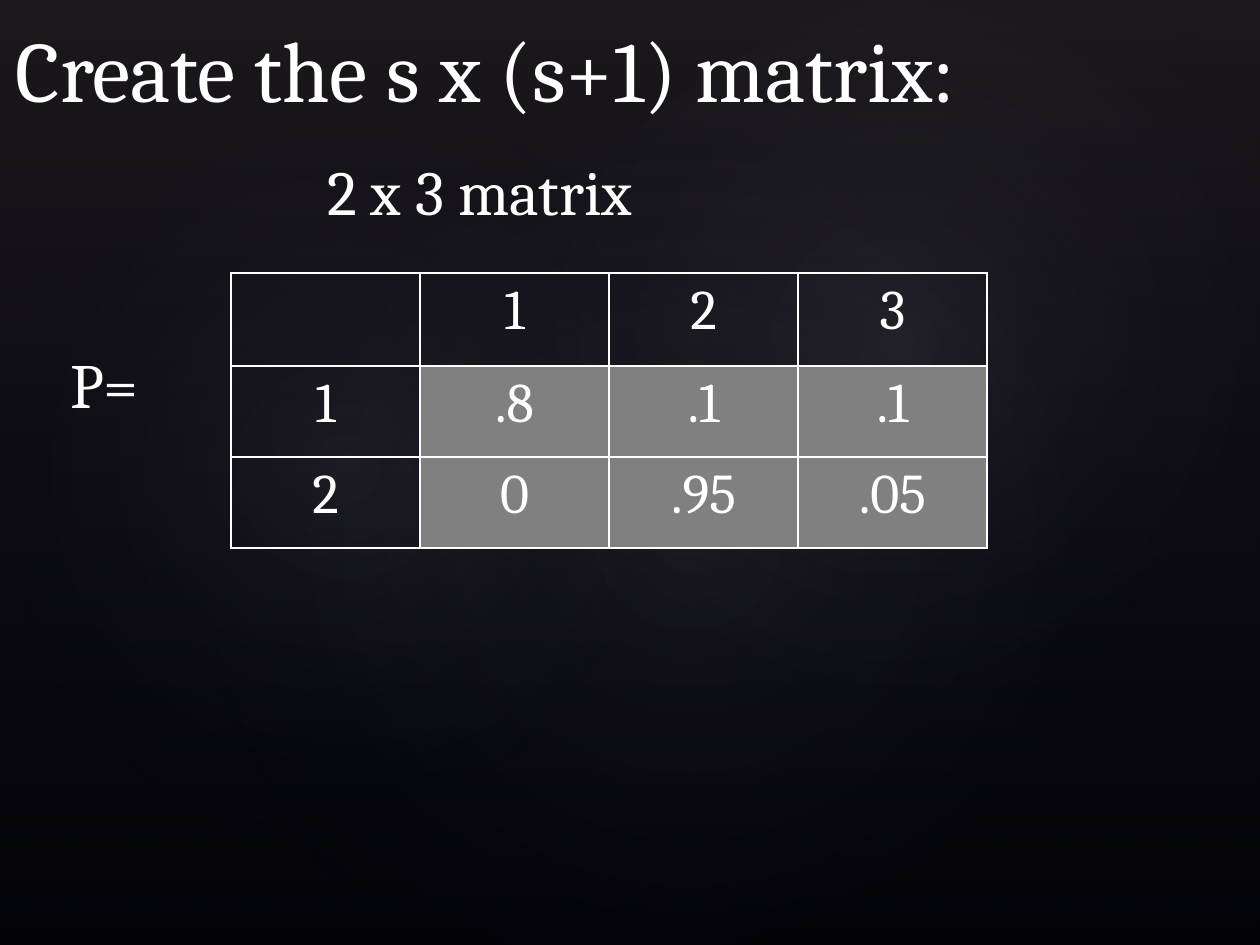
import pptx
import pptx.dml.color
import pptx.enum.shapes
import pptx.enum.text
import pptx.oxml
import pptx.oxml.ns
import pptx.util
import lxml.etree

RGB = pptx.dml.color.RGBColor
WHITE = RGB(0xFF, 0xFF, 0xFF)
BLACK = RGB(0x00, 0x00, 0x00)
GRAY = RGB(0x80, 0x80, 0x80)
PLUM = RGB(0x50, 0x46, 0x52)
NAVY = RGB(0x24, 0x28, 0x52)
MIST = RGB(0xC4, 0xBC, 0xC6)

SHAPE = pptx.enum.shapes.MSO_SHAPE
ALIGN = pptx.enum.text.PP_ALIGN
ANCHOR = pptx.enum.text.MSO_ANCHOR
qn = pptx.oxml.ns.qn


def px(n):
    return pptx.util.Emu(round(n * 914400 / 126))


class Deck:
    font = "Cambria"
    color = WHITE

    def __init__(self, width, height):
        self.prs = pptx.Presentation()
        self.prs.slide_width, self.prs.slide_height = px(width), px(height)
        self.s = self.prs.slides.add_slide(self.prs.slide_layouts[5])
        self.s.background.fill.solid()
        self.s.background.fill.fore_color.rgb = BLACK

    def set_text(self, tf, text, size, align=ALIGN.LEFT):
        tf.text = text
        for p in tf.paragraphs:
            p.alignment = align
            for r in p.runs:
                r.font.name, r.font.size = self.font, pptx.util.Pt(size)
                r.font.color.rgb = self.color
                r.font.bold = False

    def gradient(self, kind, box, stops, rotation=0):
        sp = self.s.shapes.add_shape(kind, *map(px, box))
        sp.shadow.inherit = False
        sp.rotation = rotation
        sp.line.fill.background()
        sp.fill.gradient()
        sp.fill.gradient_angle = 270
        for stop, (position, color, opacity) in zip(sp.fill.gradient_stops, stops):
            stop.position = position / 100
            stop.color.rgb = color
        grad = sp._element.spPr.find(qn("a:gradFill"))
        for clr, (position, color, opacity) in zip(grad.iter(qn("a:srgbClr")), stops):
            lxml.etree.SubElement(clr, qn("a:alpha"), val=str(opacity * 1000))
        return grad

    def glow(self, box, rotation, opacity):
        stops = [(0, MIST, opacity), (58, NAVY, 0)]
        grad = self.gradient(SHAPE.OVAL, box, stops, rotation)
        lin = grad.find(qn("a:lin"))
        circle = lxml.etree.Element(qn("a:path"), {"path": "circle"})
        lxml.etree.SubElement(circle, qn("a:fillToRect"),
                              {side: "50000" for side in "ltrb"})
        grad.replace(lin, circle)

    def title(self, box, text, size):
        sp = self.s.shapes.title
        self.s.shapes._spTree.append(sp._element)
        sp.left, sp.top, sp.width, sp.height = map(px, box)
        tf = sp.text_frame
        tf.vertical_anchor = ANCHOR.BOTTOM
        tf.word_wrap = True
        tf.auto_size = pptx.enum.text.MSO_AUTO_SIZE.NONE
        self.set_text(tf, text, size)

    def text(self, box, text, size):
        tf = self.s.shapes.add_textbox(*map(px, box)).text_frame
        tf.word_wrap = True
        self.set_text(tf, text, size)

    def borders(self, cell):
        tcPr = cell._tc.get_or_add_tcPr()
        for i, side in enumerate("LRTB"):
            ln = lxml.etree.Element(qn("a:ln" + side), w=str(int(pptx.util.Pt(1))))
            fill = lxml.etree.SubElement(ln, qn("a:solidFill"))
            lxml.etree.SubElement(fill, qn("a:srgbClr"), val=str(self.color))
            tcPr.insert(i, ln)

    def matrix(self, left, top, col_width, row_heights, rows, size):
        cols = len(rows[0])
        table = self.s.shapes.add_table(
            len(rows), cols, px(left), px(top),
            px(col_width * cols), px(sum(row_heights))).table
        table.first_row = table.horz_banding = False
        for col in table.columns:
            col.width = px(col_width)
        for i, (height, row) in enumerate(zip(row_heights, rows)):
            table.rows[i].height = px(height)
            for j, value in enumerate(row):
                cell = table.cell(i, j)
                self.set_text(cell.text_frame, value, size, ALIGN.CENTER)
                if i and j:
                    cell.fill.solid()
                    cell.fill.fore_color.rgb = GRAY
                else:
                    cell.fill.background()
                self.borders(cell)


def main():
    deck = Deck(1260, 945)
    deck.gradient(SHAPE.RECTANGLE, (0, 0, 1260, 945),
                  [(0, PLUM, 36), (100, NAVY, 10)])
    deck.glow((189, 144, 998, 786), 328.7, 7)
    deck.glow((-38, 161, 764, 617), 294.3, 8)
    deck.glow((451, 16, 893, 655), 328.7, 8)
    deck.title((3, 0, 1040, 126), "Create the s x (s+1) matrix:", 49)
    deck.matrix(231, 273, 189, (93, 91, 91),
                [("", "1", "2", "3"),
                 ("1", ".8", ".1", ".1"),
                 ("2", "0", ".95", ".05")], 32)
    deck.text((315, 146, 504, 89), "2 x 3 matrix", 36)
    deck.text((58, 339, 163, 89), "P=", 36)
    deck.prs.save("out.pptx")


if __name__ == "__main__":
    main()
